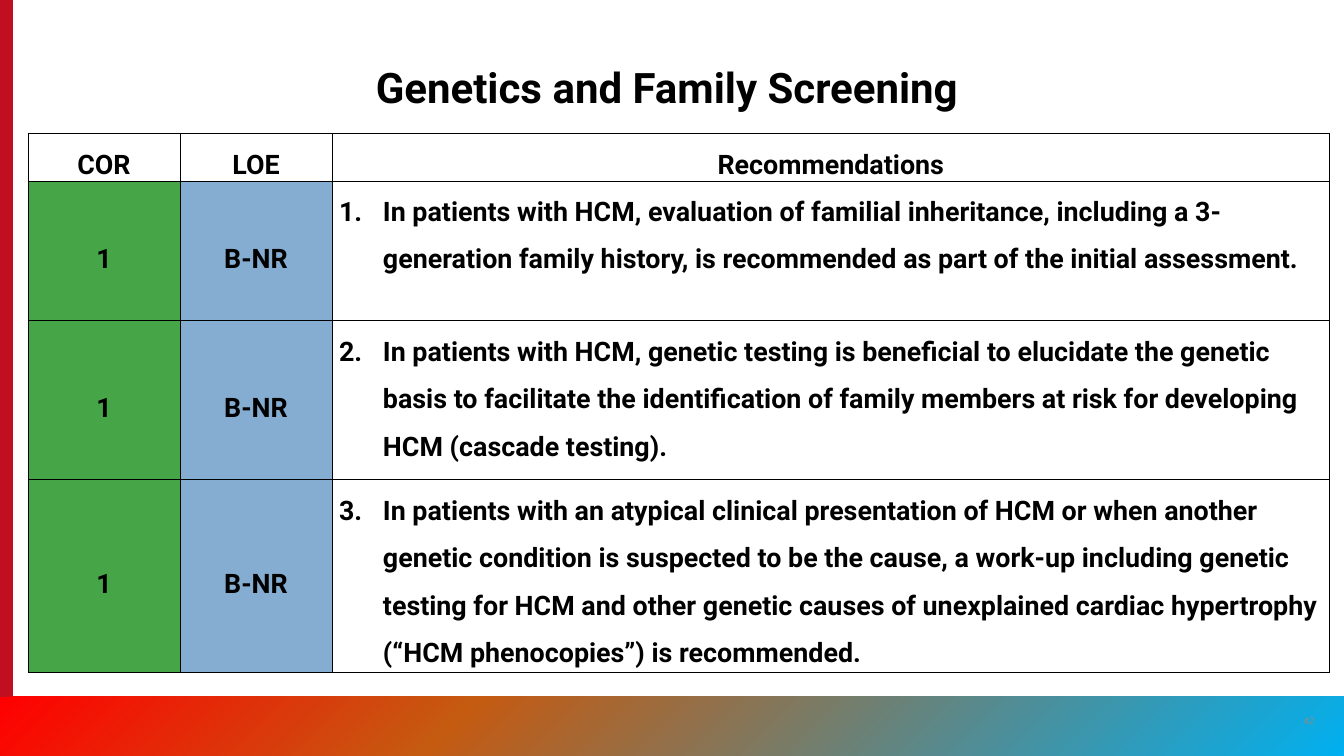
from dataclasses import dataclass
from copy import deepcopy

from lxml.etree import SubElement
from pptx import Presentation
from pptx.dml.color import RGBColor
from pptx.enum.shapes import MSO_SHAPE
from pptx.enum.text import MSO_ANCHOR, MSO_AUTO_SIZE, PP_ALIGN
from pptx.oxml.ns import qn
from pptx.util import Emu, Pt

FONT = "Roboto"
BLACK = "000000"
GREEN = "45A547"
BLUE = "85ADD1"
COLUMN_WIDTHS = (152, 152, 998)
ROW_HEIGHTS = (48, 140, 159, 193)
HEADINGS = ("COR", "LOE", "Recommendations")
TEXT_INDENT = 51
NUMBER_WIDTH = 44


@dataclass
class Recommendation:
    cor: str
    loe: str
    text: str


RECOMMENDATIONS = [
    Recommendation("1", "B-NR", "In patients with HCM, evaluation of familial inheritance, "
                   "including a 3-generation family history, is recommended as part of "
                   "the initial assessment."),
    Recommendation("1", "B-NR", "In patients with HCM, genetic testing is beneficial to "
                   "elucidate the genetic basis to facilitate the identification of family "
                   "members at risk for developing HCM (cascade testing)."),
    Recommendation("1", "B-NR", "In patients with an atypical clinical presentation of HCM or "
                   "when another genetic condition is suspected to be the cause, a work-up "
                   "including genetic testing for HCM and other genetic causes of unexplained "
                   "cardiac hypertrophy (“HCM phenocopies”) is recommended."),
]


def px(length: int) -> Emu:
    return Emu(round(length * 914400 / 84))


def rgb(colour: str) -> RGBColor:
    return RGBColor.from_string(colour)


def style(paragraph, size: int, colour: str, bold: bool, align=PP_ALIGN.CENTER) -> None:
    paragraph.alignment = align
    font = paragraph.font
    font.name, font.size, font.bold = FONT, Pt(size), bold
    font.color.rgb = rgb(colour)


def add_bar(slide, left: int, top: int, width: int, height: int):
    bar = slide.shapes.add_shape(MSO_SHAPE.RECTANGLE, px(left), px(top), px(width), px(height))
    bar.shadow.inherit = False
    bar.line.fill.background()
    return bar


def fill_gradient(bar, stops: list[tuple[float, str]], angle: int) -> None:
    bar.fill.gradient()
    bar.fill.gradient_angle = angle
    stop_list = bar._element.spPr.find(qn("a:gradFill")).find(qn("a:gsLst"))
    while len(stop_list) < len(stops):
        stop_list.append(deepcopy(stop_list[0]))
    for stop, (position, colour) in zip(bar.fill.gradient_stops, stops):
        stop.position = position
        stop.color.rgb = rgb(colour)


def add_borders(cell) -> None:
    properties = cell._tc.get_or_add_tcPr()
    for side in ("lnL", "lnR", "lnT", "lnB"):
        border = SubElement(properties, qn(f"a:{side}"), w=str(Pt(1)))
        fill = SubElement(border, qn("a:solidFill"))
        SubElement(fill, qn("a:srgbClr"), val=BLACK)


def write_cell(cell, text: str, colour: str = "", number: int = 0, middle: bool = True) -> None:
    cell.margin_left = cell.margin_right = cell.margin_top = cell.margin_bottom = 0
    cell.vertical_anchor = MSO_ANCHOR.MIDDLE if middle else MSO_ANCHOR.TOP
    add_borders(cell)
    if colour:
        cell.fill.solid()
        cell.fill.fore_color.rgb = rgb(colour)
    else:
        cell.fill.background()
    cell.text = text
    paragraph = cell.text_frame.paragraphs[0]
    paragraph.line_spacing = 1.5
    if number:
        properties = paragraph._p.get_or_add_pPr()
        properties.set("marL", str(px(TEXT_INDENT)))
        properties.set("indent", str(-px(NUMBER_WIDTH)))
        SubElement(properties, qn("a:buFont"), typeface=FONT)
        SubElement(properties, qn("a:buAutoNum"), type="arabicPeriod", startAt=str(number))
    style(paragraph, 23, BLACK, True, PP_ALIGN.LEFT if number else PP_ALIGN.CENTER)


def add_recommendations(slide) -> None:
    frame = slide.shapes.add_table(len(ROW_HEIGHTS), len(COLUMN_WIDTHS), px(28), px(133),
                                   px(sum(COLUMN_WIDTHS)), px(sum(ROW_HEIGHTS)))
    table = frame.table
    table.first_row = table.horz_banding = False
    for column, width in zip(table.columns, COLUMN_WIDTHS):
        column.width = px(width)
    for row, height in zip(table.rows, ROW_HEIGHTS):
        row.height = px(height)
    for column, heading in enumerate(HEADINGS):
        write_cell(table.cell(0, column), heading)
    for number, recommendation in enumerate(RECOMMENDATIONS, 1):
        write_cell(table.cell(number, 0), recommendation.cor, GREEN)
        write_cell(table.cell(number, 1), recommendation.loe, BLUE)
        write_cell(table.cell(number, 2), recommendation.text, number=number, middle=False)


def add_title(slide) -> None:
    title = slide.shapes.title
    title.left, title.top, title.width, title.height = px(154), px(57), px(1026), px(60)
    title.text = "Genetics and Family Screening"
    title.text_frame.auto_size = MSO_AUTO_SIZE.NONE
    title.text_frame.vertical_anchor = MSO_ANCHOR.MIDDLE
    style(title.text_frame.paragraphs[0], 36, BLACK, True)


def add_page_number(slide) -> None:
    page_number = slide.shapes.add_textbox(px(1289), px(701), px(40), px(40))
    frame = page_number.text_frame
    frame.word_wrap = True
    frame.vertical_anchor = MSO_ANCHOR.MIDDLE
    frame.text = "42"
    style(frame.paragraphs[0], 8, "8A8B8A", False)


def main() -> None:
    presentation = Presentation()
    presentation.slide_width, presentation.slide_height = px(1344), px(756)
    slide = presentation.slides.add_slide(presentation.slide_layouts[5])
    side_bar = add_bar(slide, 0, 0, 13, 756)
    side_bar.fill.solid()
    side_bar.fill.fore_color.rgb = rgb("C10E21")
    footer = add_bar(slide, 0, 697, 1344, 59)
    fill_gradient(footer, [(0, "FF0000"), (0.34, "C55A11"), (1, "00B0F0")], 315)
    add_title(slide)
    add_recommendations(slide)
    add_page_number(slide)
    presentation.save("out.pptx")


if __name__ == "__main__":
    main()
